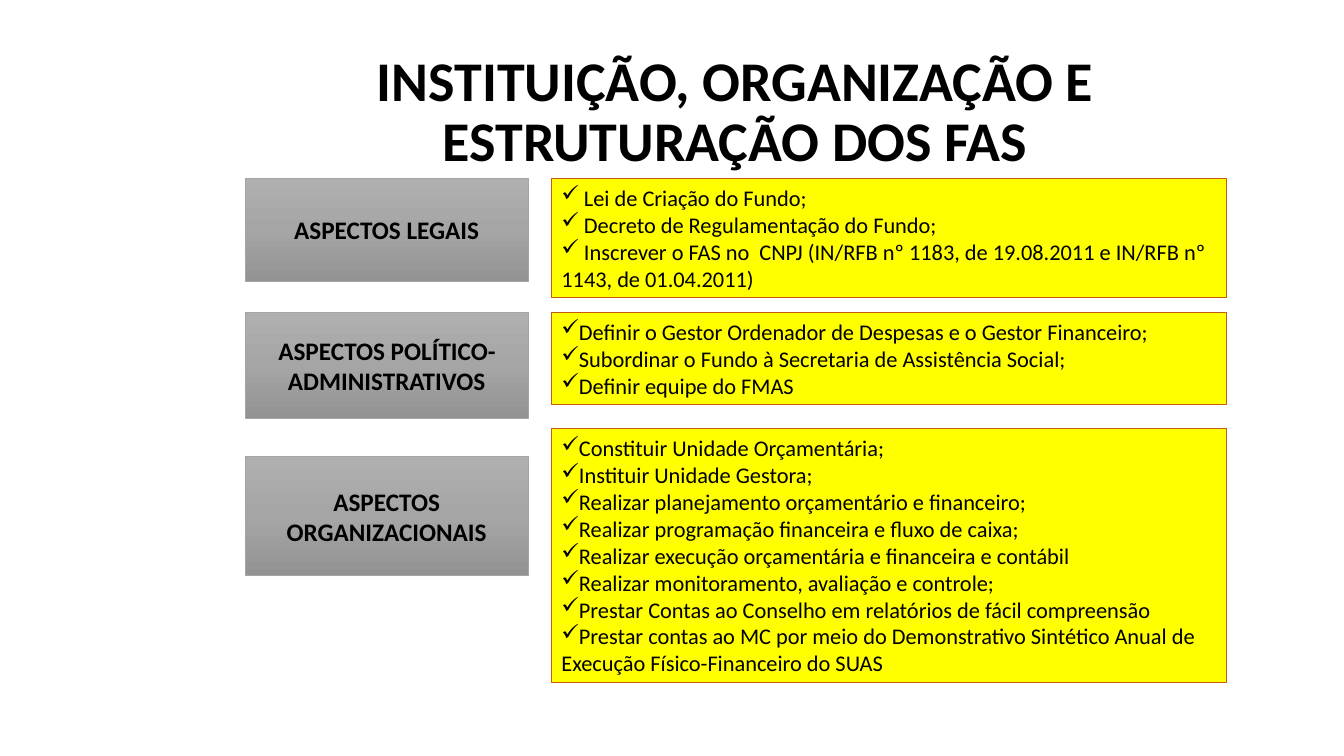
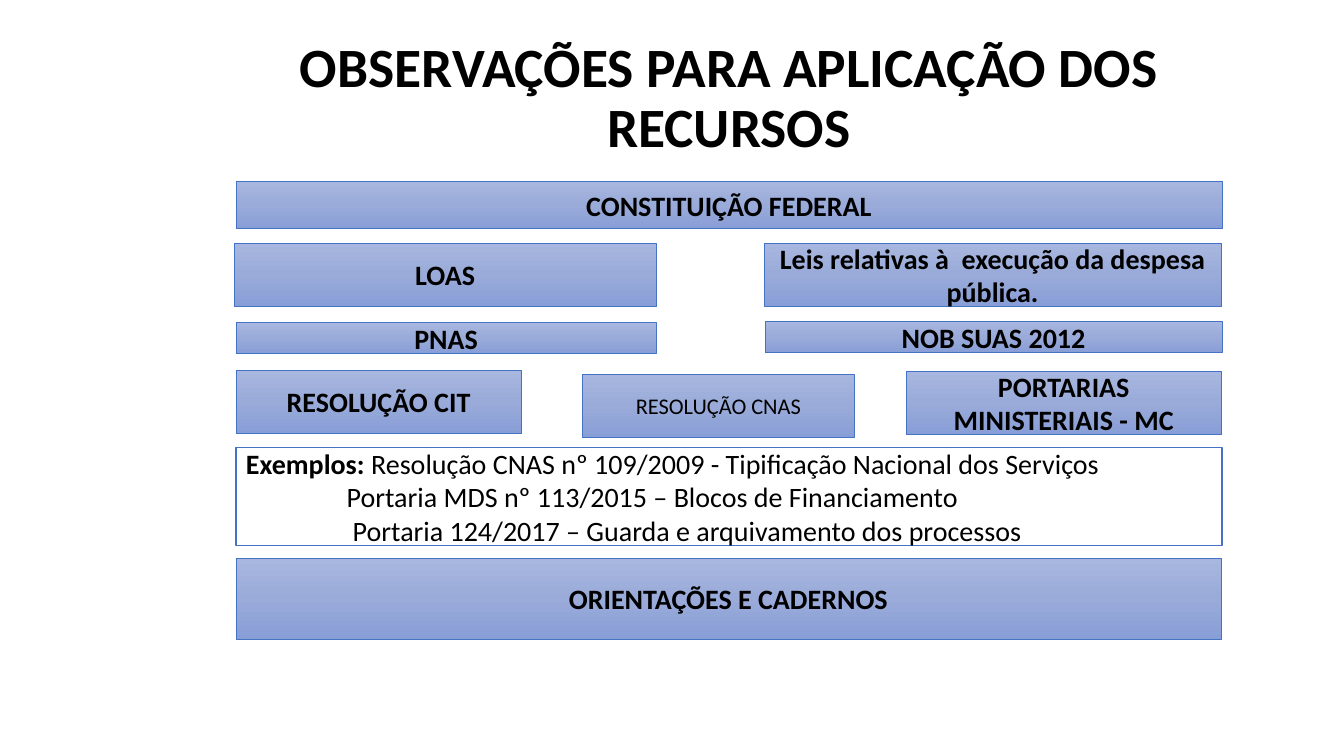
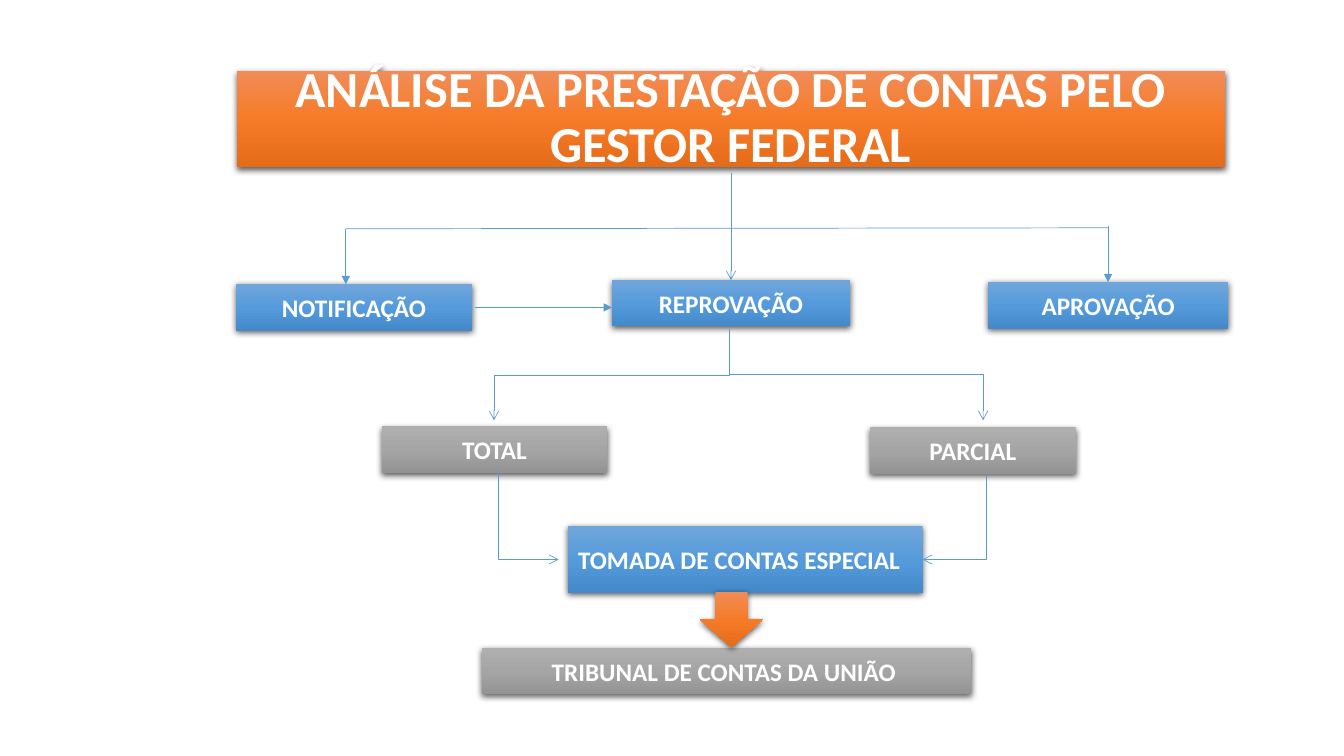
"""Builds three slides on the organisation, use and review of social assistance funds."""
from copy import deepcopy

from lxml.etree import SubElement
from pptx import Presentation
from pptx.dml.color import RGBColor
from pptx.enum.shapes import MSO_CONNECTOR, MSO_SHAPE
from pptx.enum.text import MSO_ANCHOR, PP_ALIGN
from pptx.oxml.ns import qn
from pptx.util import Inches, Pt

RECT, PROCESS, DOWN = MSO_SHAPE.RECTANGLE, MSO_SHAPE.FLOWCHART_PROCESS, MSO_SHAPE.DOWN_ARROW
STRAIGHT, ELBOW = MSO_CONNECTOR.STRAIGHT, MSO_CONNECTOR.ELBOW
LEFT, CENTER, JUSTIFY = PP_ALIGN.LEFT, PP_ALIGN.CENTER, PP_ALIGN.JUSTIFY
MIDDLE = MSO_ANCHOR.MIDDLE

GRAY = ["AFAFAF", "A5A5A5", "939393"]
PERIWINKLE = ["A8B7DF", "9AABD9", "889ED7"]
BLUE = ["71A6DB", "559BDB", "448ACA"]
ORANGE = ["F18C57", "F67B28", "E56C19"]
LINK_BLUE = "5B9BD5"

TITLE = {"size": 40, "spacing": 0.9}
ASPECT = {"fill": GRAY, "line": "A5A5A5"}
CHECKLIST = {"fill": ["FFFF00"], "line": "C55A11", "width": 0.75,
             "size": 16, "bold": False, "bullet": "✓"}
NORM = {"fill": PERIWINKLE, "line": "4472C4", "geom": PROCESS, "size": 20}
EXAMPLES = {"fill": ["FFFFFF"], "line": "4472C4", "width": 1, "size": 20,
            "bold": False, "align": LEFT}
STEP = {"color": "FFFFFF", "shadow": True}


def box(s, at, lines, fill=(), line=None, width=0.5, geom=RECT, size=18, color="000000",
        bold=True, align=CENTER, spacing=1.0, after=0, bullet=None, sides=(0.1, 0.1),
        shadow=False):
    """Add a box with one paragraph for each line of text."""
    sp = s.shapes.add_shape(geom, *map(Inches, at))
    sp.shadow.inherit = False
    if len(fill) > 1:
        sp.fill.gradient()
        sp.fill.gradient_angle = 270
        stops = sp._element.spPr.find(".//" + qn("a:gsLst"))
        stops.append(deepcopy(stops[0]))
        for i, stop in enumerate(sp.fill.gradient_stops):
            stop.position = i / 2
            stop.color.rgb = RGBColor.from_string(fill[i])
    elif fill:
        sp.fill.solid()
        sp.fill.fore_color.rgb = RGBColor.from_string(fill[0])
    else:
        sp.fill.background()
    if line:
        sp.line.color.rgb = RGBColor.from_string(line)
        sp.line.width = Pt(width)
    else:
        sp.line.fill.background()
    if shadow:
        effects = sp._element.spPr.find(qn("a:effectLst"))
        outer = SubElement(effects, qn("a:outerShdw"), blurRad="57150", dist="19050",
                           dir="5400000", algn="ctr", rotWithShape="0")
        black = SubElement(outer, qn("a:srgbClr"), val="000000")
        SubElement(black, qn("a:alpha"), val="63000")
    tf = sp.text_frame
    frame = {"word_wrap": True, "vertical_anchor": MIDDLE,
             "margin_left": Inches(sides[0]), "margin_right": Inches(sides[1])}
    for name, value in frame.items():
        setattr(tf, name, value)
    for i, text in enumerate(lines):
        p = tf.add_paragraph() if i else tf.paragraphs[0]
        if bullet:
            SubElement(p._p.get_or_add_pPr(), qn("a:buChar"), char=bullet)
        for name, value in {"alignment": align, "line_spacing": spacing,
                            "space_after": Pt(after)}.items():
            setattr(p, name, value)
        r = p.add_run()
        r.text = text
        for name, value in {"name": "Calibri", "size": Pt(size), "bold": bold}.items():
            setattr(r.font, name, value)
        r.font.color.rgb = RGBColor.from_string(color)
    return sp


def link(s, x1, y1, x2, y2, head=None, bend=None):
    """Add a straight line, or a bent one that leaves downwards."""
    dx, dy = abs(x2 - x1), y2 - y1
    if bend:
        left, top = (x1 + x2 - dy) / 2, (y1 + y2 - dx) / 2
        c = s.shapes.add_connector(ELBOW, *map(Inches, (left, top, left + dy, top + dx)))
        c._element.spPr.find(qn("a:prstGeom")).set("prst", bend)
        xfrm = c._element.spPr.find(qn("a:xfrm"))
        xfrm.set("rot", "16200000" if x2 > x1 else "5400000")
        if x2 > x1:
            xfrm.set("flipH", "1")
    else:
        c = s.shapes.add_connector(STRAIGHT, *map(Inches, (x1, y1, x2, y2)))
    c.line.color.rgb = RGBColor.from_string(LINK_BLUE)
    c.line.width = Pt(0.5)
    if head:
        SubElement(c.line._get_or_add_ln(), qn("a:tailEnd"), type=head)
    SubElement(c._element.spPr, qn("a:effectLst"))
    return c


prs = Presentation()
prs.slide_width, prs.slide_height = Inches(13.33), Inches(7.5)
blank = prs.slide_layouts[6]

s = prs.slides.add_slide(blank)
aspects = [
    (1.77, 1.02, "ASPECTOS LEGAIS", 0.1),
    (3.1, 1.05, "ASPECTOS POLÍTICO-ADMINISTRATIVOS", 0.02),
    (4.53, 1.18, "ASPECTOS ORGANIZACIONAIS", 0.1),
]
for top, height, text, side in aspects:
    box(s, (2.43, top, 2.81, height), [text], sides=(side, side), **ASPECT)

checklists = [
    (1.77, 1.18, LEFT, [
        " Lei de Criação do Fundo;",
        " Decreto de Regulamentação do Fundo;",
        " Inscrever o FAS no  CNPJ (IN/RFB nº 1183, de 19.08.2011 e IN/RFB nº 1143, "
        "de 01.04.2011)",
    ]),
    (3.1, 0.91, JUSTIFY, [
        "Definir o Gestor Ordenador de Despesas e o Gestor Financeiro;",
        "Subordinar o Fundo à Secretaria de Assistência Social;",
        "Definir equipe do FMAS",
    ]),
    (4.25, 2.52, LEFT, [
        "Constituir Unidade Orçamentária;",
        "Instituir Unidade Gestora;",
        "Realizar planejamento orçamentário e financeiro;",
        "Realizar programação financeira e fluxo de caixa;",
        "Realizar execução orçamentária e financeira e contábil",
        "Realizar monitoramento, avaliação e controle;",
        "Prestar Contas ao Conselho em relatórios de fácil compreensão",
        "Prestar contas ao MC por meio do Demonstrativo Sintético Anual de Execução "
        "Físico-Financeiro do SUAS",
    ]),
]
for top, height, align, lines in checklists:
    box(s, (5.47, top, 6.7, height), lines, align=align, **CHECKLIST)
box(s, (2.44, 0.47, 9.7, 1.31), ["INSTITUIÇÃO, ORGANIZAÇÃO E ESTRUTURAÇÃO DOS FAS"],
    after=10, **TITLE)

s = prs.slides.add_slide(blank)
box(s, (2.34, 0.4, 9.78, 1.18), ["OBSERVAÇÕES PARA APLICAÇÃO DOS RECURSOS"],
    **{**TITLE, "size": 39.6})
norms = [
    (2.34, 1.8, 9.78, 0.47, "CONSTITUIÇÃO FEDERAL"),
    (2.32, 2.41, 4.19, 0.63, "LOAS"),
    (7.58, 2.41, 4.53, 0.63, "Leis relativas à  execução da despesa pública."),
    (2.34, 3.2, 4.17, 0.31, "PNAS"),
    (7.59, 3.19, 4.53, 0.31, "NOB SUAS 2012"),
    (2.34, 3.67, 2.83, 0.63, "RESOLUÇÃO CIT"),
    (8.99, 3.68, 3.12, 0.63, "PORTARIAS MINISTERIAIS - MC"),
    (2.34, 5.54, 9.77, 0.8, "ORIENTAÇÕES E CADERNOS"),
]
for *at, text in norms:
    box(s, at, [text], **NORM)
box(s, (5.78, 3.71, 2.69, 0.63), ["RESOLUÇÃO CNAS"], **{**NORM, "size": 16, "bold": False})

examples = box(s, (2.34, 4.44, 9.78, 0.97), [
    "Exemplos: ",
    "Portaria MDS nº 113/2015 – Blocos de Financiamento",
    "Portaria 124/2017 – Guarda e arquivamento dos processos",
], **EXAMPLES)
first, second, third = examples.text_frame.paragraphs
first._p.append(deepcopy(first.runs[0]._r))
first.runs[0].font.bold = True
first.runs[1].text = "Resolução CNAS nº 109/2009 - Tipificação Nacional dos Serviços"
for p, indent in ((second, 1), (third, 1.06)):
    p._p.get_or_add_pPr().set("marL", str(Inches(indent)))

s = prs.slides.add_slide(blank)
box(s, (2.35, 0.7, 9.8, 0.96), ["ANÁLISE DA PRESTAÇÃO DE CONTAS PELO GESTOR FEDERAL"],
    fill=ORANGE, size=36, spacing=0.9, **STEP)
steps = [
    (6.07, 2.78, 2.36, 0.46, "REPROVAÇÃO", BLUE, (0.1, 0.1)),
    (2.34, 2.82, 2.34, 0.46, "NOTIFICAÇÃO", BLUE, (0.1, 0.1)),
    (9.8, 2.8, 2.38, 0.46, "APROVAÇÃO", BLUE, (0.1, 0.1)),
    (3.79, 4.23, 2.23, 0.46, "TOTAL", GRAY, (0.1, 0.1)),
    (8.63, 4.24, 2.04, 0.46, "PARCIAL", GRAY, (0.1, 0.1)),
    (5.63, 5.22, 3.52, 0.66, "TOMADA DE CONTAS ESPECIAL", BLUE, (0.05, 0.17)),
    (4.78, 6.43, 4.85, 0.46, "TRIBUNAL DE CONTAS DA UNIÃO", GRAY, (0.1, 0.15)),
]
boxes = {}
for *at, text, fill, sides in steps:
    boxes[text] = box(s, at, [text], fill=fill, sides=sides, **STEP)
box(s, (6.94, 5.87, 0.63, 0.55), [], fill=ORANGE, geom=DOWN, **STEP)

link(s, 7.25, 1.72, 7.25, 2.78, "arrow").end_connect(boxes["REPROVAÇÃO"], 0)
link(s, 10.99, 2.24, 10.99, 2.8, "triangle").end_connect(boxes["APROVAÇÃO"], 0)
link(s, 3.43, 2.27, 10.99, 2.26)
link(s, 3.43, 2.27, 3.43, 2.82, "triangle")
link(s, 4.71, 3.05, 6.07, 3.05, "triangle")
bends = [
    (7.23, 3.26, 9.75, 4.17, "bentConnector3"),
    (7.23, 3.28, 4.9, 4.17, "bentConnector3"),
    (4.94, 4.67, 5.54, 5.55, "bentConnector2"),
    (9.78, 4.7, 9.15, 5.55, "bentConnector2"),
]
for *ends, bend in bends:
    link(s, *ends, "arrow", bend)

prs.save("out.pptx")
